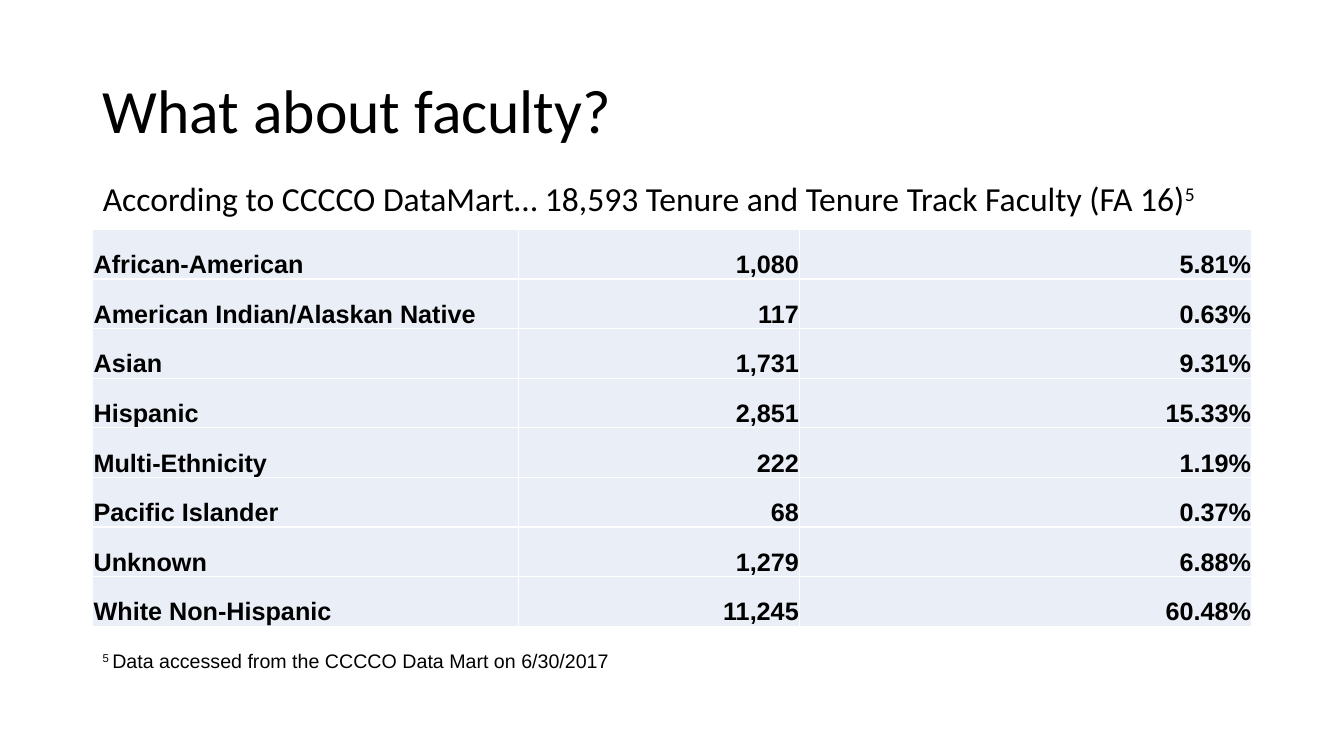
from lxml.etree import SubElement
from pptx import Presentation
from pptx.dml.color import RGBColor
from pptx.enum.text import MSO_ANCHOR as Anchor, MSO_AUTO_SIZE as AutoSize, PP_ALIGN as Align
from pptx.oxml.ns import qn
from pptx.util import Cm, Pt

BLACK = RGBColor(0x00, 0x00, 0x00)
WHITE = RGBColor(0xFF, 0xFF, 0xFF)
PALE_BLUE = RGBColor(0xEA, 0xEF, 0xF7)

LEFT, WIDTH = Cm(2.34), Cm(29.21)
COLUMN_WIDTHS = [Cm(10.72), Cm(7.09), Cm(11.4)]
ROW_HEIGHT = Cm(1.25)
FACULTY = [
    ("African-American", "1,080", "5.81%"),
    ("American Indian/Alaskan Native", "117", "0.63%"),
    ("Asian", "1,731", "9.31%"),
    ("Hispanic", "2,851", "15.33%"),
    ("Multi-Ethnicity", "222", "1.19%"),
    ("Pacific Islander", "68", "0.37%"),
    ("Unknown", "1,279", "6.88%"),
    ("White Non-Hispanic", "11,245", "60.48%"),
]


def add_run(para, text, font, size, bold=False, raised=False):
    """Add one formatted run, raised for a footnote mark."""
    span = para.add_run()
    span.text = text
    span.font.name = font
    span.font.size = Pt(size)
    span.font.bold = bold
    span.font.color.rgb = BLACK
    if raised:
        span.font._element.set("baseline", "30000")


def place_placeholder(box, top, height, anchor):
    """Move a placeholder, format its frame and return its paragraph."""
    box.left, box.top, box.width, box.height = LEFT, top, WIDTH, height
    frame = box.text_frame
    frame.word_wrap = True
    frame.auto_size = AutoSize.NONE
    frame.vertical_anchor = anchor
    frame.margin_left = frame.margin_right = Cm(0.25)
    frame.margin_top = frame.margin_bottom = Cm(0.25)
    para = frame.paragraphs[0]
    para.alignment = Align.LEFT
    para.line_spacing = 0.9
    return para


def add_title(page):
    """Fill the title placeholder."""
    para = place_placeholder(page.shapes.title, Cm(1.01), Cm(3.68), Anchor.MIDDLE)
    add_run(para, "What about faculty?", "Calibri", 44)


def add_lead(page):
    """Fill the body placeholder with an unbulleted sentence."""
    para = place_placeholder(page.placeholders[1], Cm(4.34), Cm(1.45), Anchor.TOP)
    para.space_before = Pt(10)
    properties = para._p.get_or_add_pPr()
    properties.set("marL", "0")
    properties.set("indent", "0")
    SubElement(properties, qn("a:buNone"))
    lead = "According to CCCCO DataMart… 18,593 Tenure and Tenure Track Faculty (FA 16)"
    add_run(para, lead, "Calibri", 24)
    add_run(para, "5", "Calibri", 24, raised=True)


def set_borders(cell, color, width):
    """Draw a solid line on all four sides of a cell."""
    properties = cell._tc.get_or_add_tcPr()
    for side in ("lnL", "lnR", "lnT", "lnB"):
        line = SubElement(properties, qn(f"a:{side}"), w=str(width))
        fill = SubElement(line, qn("a:solidFill"))
        SubElement(fill, qn("a:srgbClr"), val=str(color))


def fill_cell(cell, text, align):
    """Format one table cell and write its text."""
    set_borders(cell, WHITE, Pt(1))
    cell.fill.solid()
    cell.fill.fore_color.rgb = PALE_BLUE
    cell.vertical_anchor = Anchor.BOTTOM
    cell.margin_left = cell.margin_right = cell.margin_top = Cm(0.02)
    cell.margin_bottom = Cm(0)
    para = cell.text_frame.paragraphs[0]
    para.alignment = align
    add_run(para, text, "Arial", 18, bold=True)


def add_faculty_table(page):
    """Add the table of faculty counts and shares."""
    height = ROW_HEIGHT * len(FACULTY)
    table = page.shapes.add_table(
        len(FACULTY), len(COLUMN_WIDTHS), LEFT, Cm(5.78), WIDTH, height
    ).table
    table.first_row = table.horz_banding = False
    for column, width in zip(table.columns, COLUMN_WIDTHS):
        column.width = width
    for row, values in zip(table.rows, FACULTY):
        row.height = ROW_HEIGHT
        for index, (cell, text) in enumerate(zip(row.cells, values)):
            fill_cell(cell, text, Align.RIGHT if index else Align.LEFT)


def add_footnote(page):
    """Add the data source below the table."""
    box = page.shapes.add_textbox(LEFT, Cm(16.23), WIDTH, Cm(0.86))
    frame = box.text_frame
    frame.word_wrap = True
    frame.auto_size = AutoSize.SHAPE_TO_FIT_TEXT
    para = frame.paragraphs[0]
    add_run(para, "5 ", "Arial", 14, raised=True)
    add_run(para, "Data accessed from the CCCCO Data Mart on 6/30/2017", "Arial", 14)


def main():
    """Build the faculty slide and save it."""
    deck = Presentation()
    deck.slide_width, deck.slide_height = Cm(33.87), Cm(19.05)
    page = deck.slides.add_slide(deck.slide_layouts[1])
    page.background.fill.solid()
    page.background.fill.fore_color.rgb = WHITE
    add_title(page)
    add_lead(page)
    add_faculty_table(page)
    add_footnote(page)
    deck.save("out.pptx")


if __name__ == "__main__":
    main()
